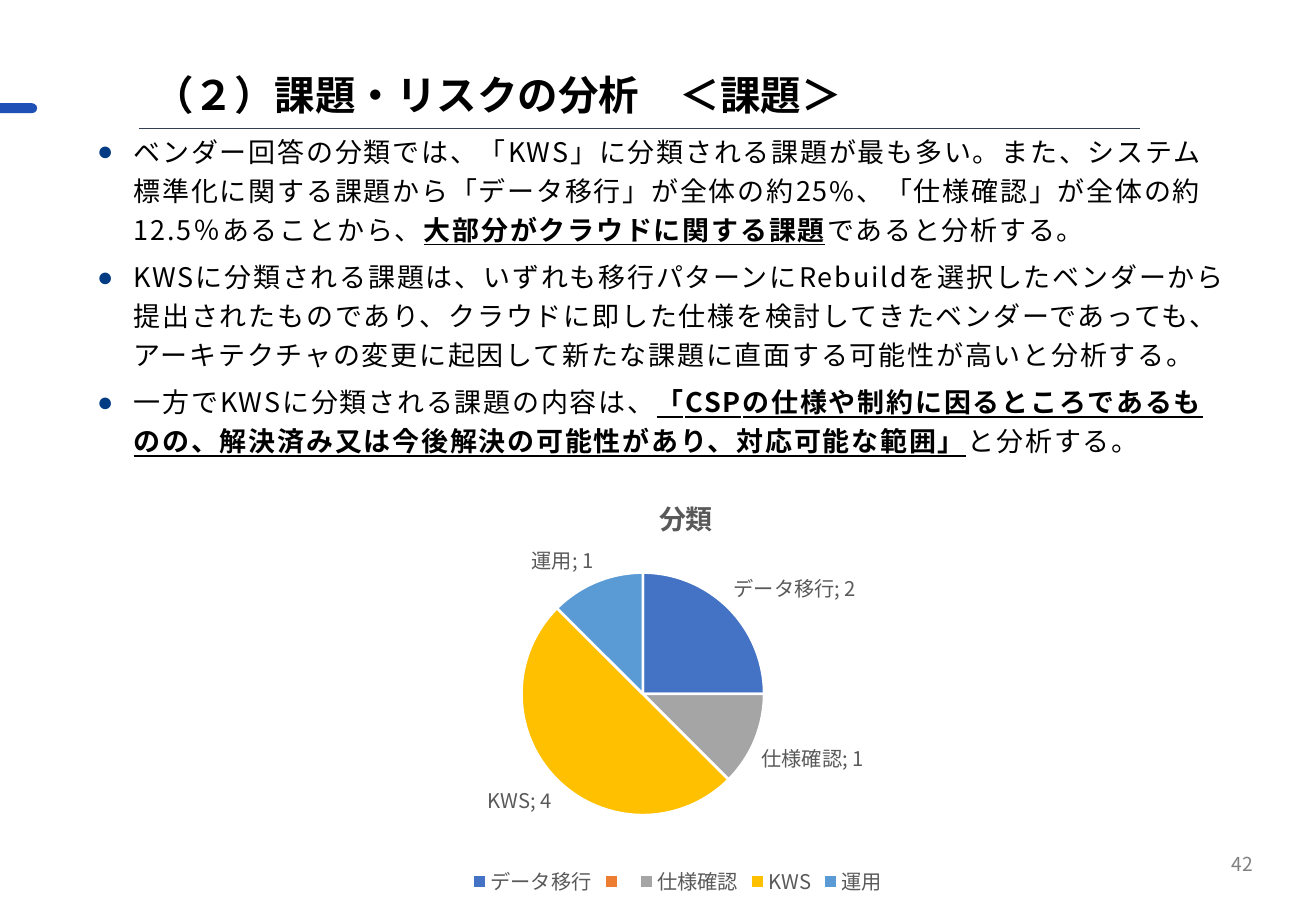
from dataclasses import dataclass
from typing import Optional

from lxml.etree import SubElement
from pptx import Presentation
from pptx.chart.data import CategoryChartData
from pptx.dml.color import RGBColor
from pptx.enum.chart import XL_CHART_TYPE as ChartType
from pptx.enum.chart import XL_LABEL_POSITION as LabelPosition
from pptx.enum.chart import XL_LEGEND_POSITION as LegendPosition
from pptx.enum.lang import MSO_LANGUAGE_ID as Language
from pptx.enum.shapes import MSO_CONNECTOR as Connector
from pptx.enum.shapes import MSO_SHAPE as Shape
from pptx.enum.text import MSO_ANCHOR as Anchor
from pptx.enum.text import MSO_AUTO_SIZE as AutoSize
from pptx.enum.text import PP_ALIGN as Align
from pptx.oxml.ns import qn
from pptx.util import Pt


@dataclass(frozen=True)
class Theme:
    font: str = "Noto Sans CJK JP"
    bullet_font: str = "Arial"
    text: str = "000000"
    chart_text: str = "595959"
    page_number: str = "808080"
    accent: str = "1E50B5"
    rule: str = "333F50"
    bullet: str = "003B83"
    white: str = "FFFFFF"
    title_size: float = 24
    body_size: float = 16
    chart_title_size: float = 16
    label_size: float = 12
    number_size: float = 11.4


@dataclass(frozen=True)
class Box:
    left: float
    top: float
    width: float
    height: float

    def lengths(self) -> tuple:
        return Pt(self.left), Pt(self.top), Pt(self.width), Pt(self.height)


@dataclass(frozen=True)
class Phrase:
    text: str
    strong: bool = False


@dataclass(frozen=True)
class Slice:
    name: str
    count: Optional[int]
    color: str


THEME = Theme()
TITLE_BOX = Box(90.7, 39.6, 613.4, 32.4)
BODY_BOX = Box(57.6, 76.3, 670.3, 306)
NUMBER_BOX = Box(573.8, 497.5, 175.7, 28.8)
CHART_BOX = Box(169.9, 270, 463.7, 264.2)
ACCENT_BOX = Box(-5.8, 61.2, 27.8, 5.8)
BULLET_INDENT = 21.6

FINDINGS = [
    [
        Phrase("ベンダー回答の分類では、「KWS」に分類される課題が最も多い。また、システム標準化に関する課題から"
               "「データ移行」が全体の約25%、「仕様確認」が全体の約12.5％あることから、"),
        Phrase("大部分がクラウドに関する課題", strong=True),
        Phrase("であると分析する。"),
    ],
    [
        Phrase("KWSに分類される課題は、いずれも移行パターンにRebuildを選択したベンダーから提出されたものであり、"
               "クラウドに即した仕様を検討してきたベンダーであっても、"
               "アーキテクチャの変更に起因して新たな課題に直面する可能性が高いと分析する。"),
    ],
    [
        Phrase("一方でKWSに分類される課題の内容は、"),
        Phrase("「CSPの仕様や制約に因るところであるものの、解決済み又は今後解決の可能性があり、対応可能な範囲」",
               strong=True),
        Phrase("と分析する。"),
    ],
]

SLICES = [
    Slice("データ移行", 2, "4472C4"),
    Slice("", None, "ED7D31"),
    Slice("仕様確認", 1, "A5A5A5"),
    Slice("KWS", 4, "FFC000"),
    Slice("運用", 1, "5B9BD5"),
]


def rgb(color: str) -> RGBColor:
    return RGBColor.from_string(color)


def format_font(font, size: float, color: str, bold: bool = False) -> None:
    font.size = Pt(size)
    font.bold = bold
    font.color.rgb = rgb(color)
    font.name = THEME.font
    SubElement(font._rPr, qn("a:ea"), typeface=THEME.font)


def add_text(paragraph, text: str, *, size: float, color: str = THEME.text, bold: bool = False,
             underline: bool = False, spacing: float = 0, align: Align = Align.LEFT) -> None:
    paragraph.alignment = align
    run = paragraph.add_run()
    run.text = text
    format_font(run.font, size, color, bold)
    run.font.underline = underline
    run.font.language_id = Language.JAPANESE
    if spacing:
        run.font._rPr.set("spc", str(round(spacing * 100)))


def prepare_frame(shape, margin: float = 0, anchor: Anchor = Anchor.TOP):
    frame = shape.text_frame
    frame.word_wrap = True
    frame.auto_size = AutoSize.NONE
    frame.vertical_anchor = anchor
    frame.margin_left = frame.margin_right = Pt(margin)
    frame.margin_top = frame.margin_bottom = Pt(margin / 2)
    return frame


def add_bullet(paragraph) -> None:
    properties = paragraph._p.get_or_add_pPr()
    properties.set("marL", str(Pt(BULLET_INDENT)))
    properties.set("indent", str(-Pt(BULLET_INDENT)))
    color = SubElement(properties, qn("a:buClr"))
    SubElement(color, qn("a:srgbClr"), val=THEME.bullet)
    SubElement(properties, qn("a:buFont"), typeface=THEME.bullet_font)
    SubElement(properties, qn("a:buChar"), char="●")


def add_header(slide) -> None:
    accent = slide.shapes.add_shape(Shape.ROUNDED_RECTANGLE, *ACCENT_BOX.lengths())
    accent.adjustments[0] = 0.5
    accent.shadow.inherit = False
    accent.fill.solid()
    accent.fill.fore_color.rgb = rgb(THEME.accent)
    accent.line.fill.background()

    title = slide.shapes.title
    title.left, title.top, title.width, title.height = TITLE_BOX.lengths()
    frame = prepare_frame(title, anchor=Anchor.MIDDLE)
    add_text(frame.paragraphs[0], "（２）課題・リスクの分析　＜課題＞", size=THEME.title_size, bold=True)

    rule = slide.shapes.add_connector(Connector.STRAIGHT, Pt(82.1), Pt(76.3), Pt(675.4), Pt(76.3))
    rule.line.color.rgb = rgb(THEME.rule)
    rule.line.width = Pt(0.5)
    SubElement(rule._element.spPr, qn("a:effectLst"))


def add_findings(slide) -> None:
    frame = prepare_frame(slide.shapes.add_textbox(*BODY_BOX.lengths()))
    for index, phrases in enumerate(FINDINGS):
        paragraph = frame.add_paragraph() if index else frame.paragraphs[0]
        paragraph.line_spacing = Pt(23.1)
        paragraph.space_after = Pt(5)
        add_bullet(paragraph)
        for phrase in phrases:
            add_text(paragraph, phrase.text, size=THEME.body_size, bold=phrase.strong,
                     underline=phrase.strong, spacing=1.1)


def set_layout(parent, position: int, **values: object) -> None:
    layout = parent.find(qn("c:layout"))
    if layout is None:
        layout = SubElement(parent, qn("c:layout"))
        parent.insert(position, layout)
    manual = SubElement(layout, qn("c:manualLayout"))
    for name, value in values.items():
        SubElement(manual, qn(f"c:{name}"), val=str(value))


def add_category_chart(slide) -> None:
    data = CategoryChartData()
    data.categories = [item.name for item in SLICES]
    data.add_series("分類", [item.count for item in SLICES])
    chart = slide.shapes.add_chart(ChartType.PIE, *CHART_BOX.lengths(), data).chart
    format_font(chart.font, THEME.label_size, THEME.chart_text)

    chart.has_title = True
    add_text(chart.chart_title.text_frame.paragraphs[0], "分類", size=THEME.chart_title_size,
             color=THEME.chart_text, bold=True, align=Align.CENTER)
    set_layout(chart.chart_title._element, 1, xMode="edge", yMode="edge", x=0.47, y=0.08)
    set_layout(chart._chartSpace.find(f".//{qn('c:plotArea')}"), 0, layoutTarget="inner",
               xMode="edge", yMode="edge", x=0.3, y=0.26, w=0.31, h=0.55)

    chart.has_legend = True
    chart.legend.position = LegendPosition.BOTTOM
    chart.legend.include_in_layout = False
    format_font(chart.legend.font, THEME.label_size, THEME.chart_text)

    plot = chart.plots[0]
    plot.vary_by_categories = True
    for index, item in enumerate(SLICES):
        point_format = plot.series[0].points[index].format
        point_format.fill.solid()
        point_format.fill.fore_color.rgb = rgb(item.color)
        point_format.line.color.rgb = rgb(THEME.white)
        point_format.line.width = Pt(1.5)

    labels = plot.series[0].data_labels
    labels.show_value = labels.show_category_name = True
    labels.show_percentage = labels.show_legend_key = False
    labels.position = LabelPosition.OUTSIDE_END
    format_font(labels.font, THEME.label_size, THEME.chart_text)
    separator = SubElement(labels._element, qn("c:separator"))
    separator.text = "; "
    leader_lines = labels._element.find(qn("c:showLeaderLines"))
    if leader_lines is not None:
        leader_lines.addprevious(separator)


def main() -> None:
    presentation = Presentation()
    presentation.slide_width, presentation.slide_height = Pt(779.76), Pt(540)
    slide = presentation.slides.add_slide(presentation.slide_layouts[5])
    add_header(slide)
    number = prepare_frame(slide.shapes.add_textbox(*NUMBER_BOX.lengths()), 7.2, Anchor.MIDDLE)
    add_text(number.paragraphs[0], "42", size=THEME.number_size, color=THEME.page_number, align=Align.RIGHT)
    add_findings(slide)
    add_category_chart(slide)
    presentation.save("out.pptx")


if __name__ == "__main__":
    main()
